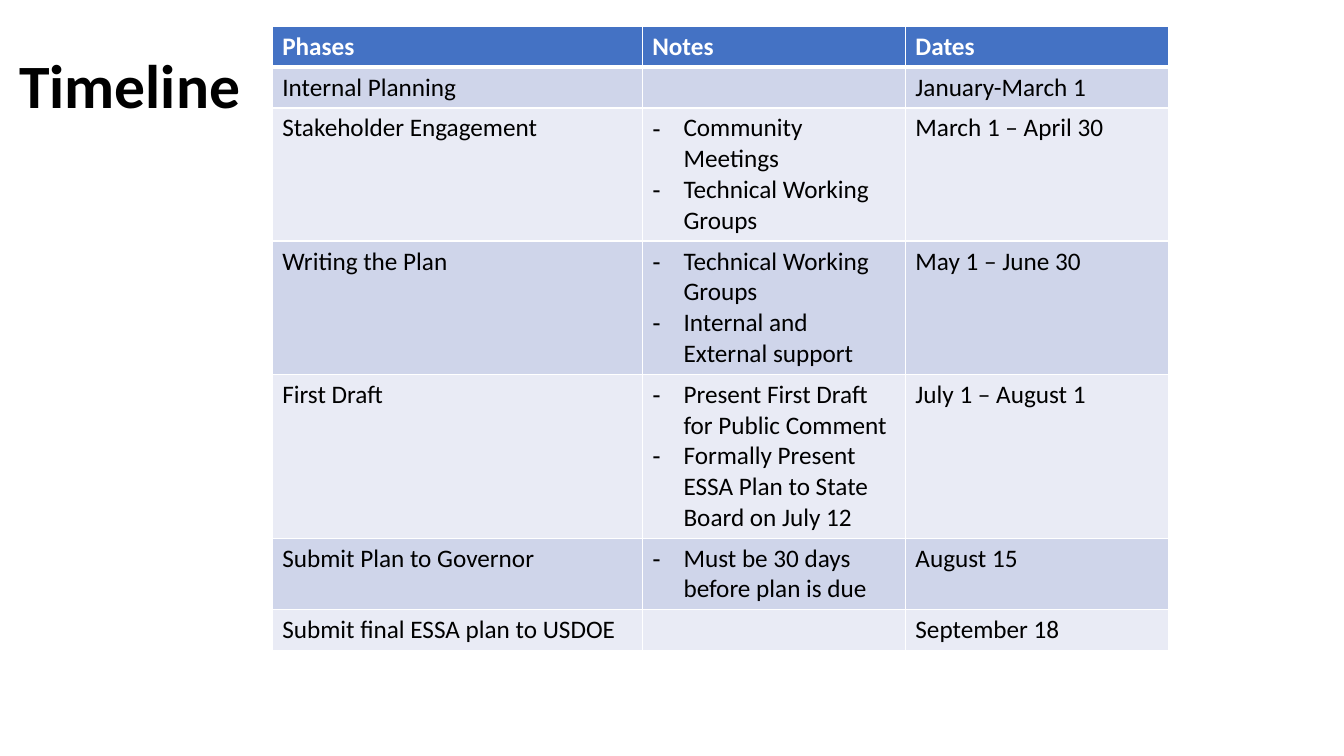
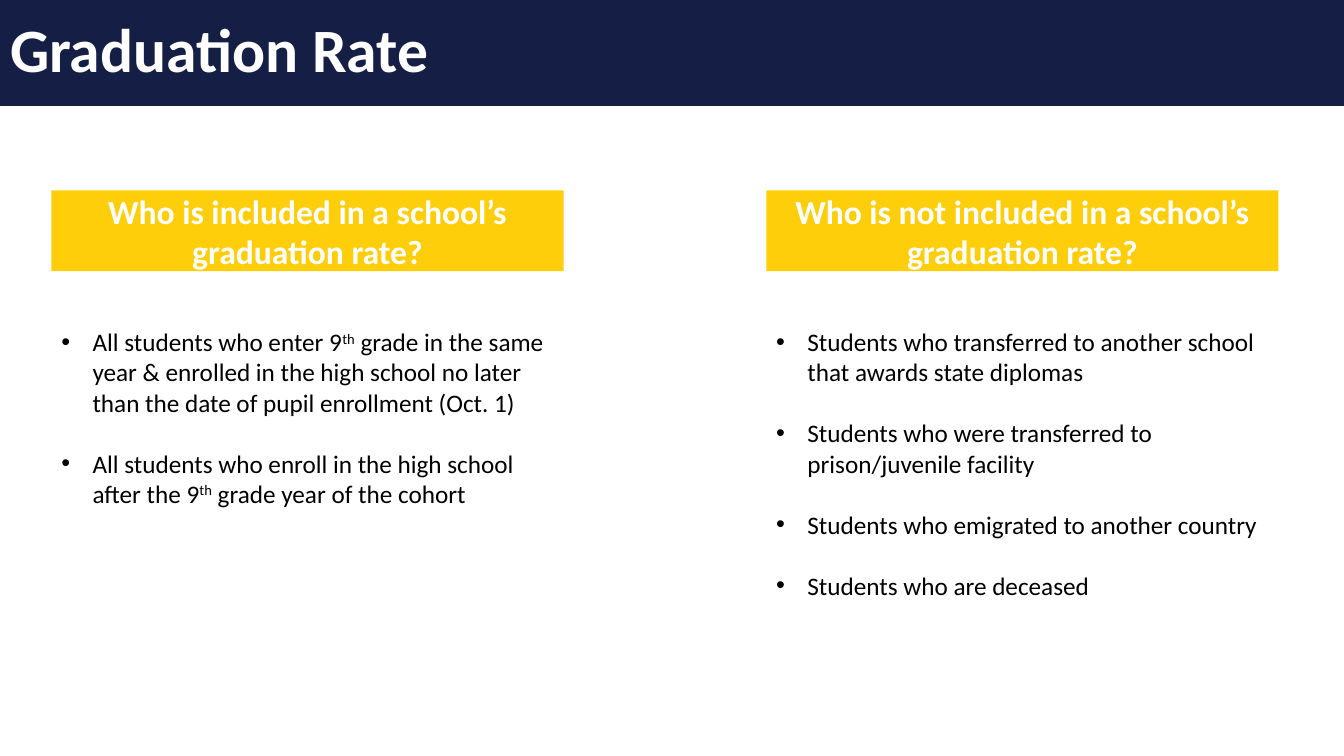
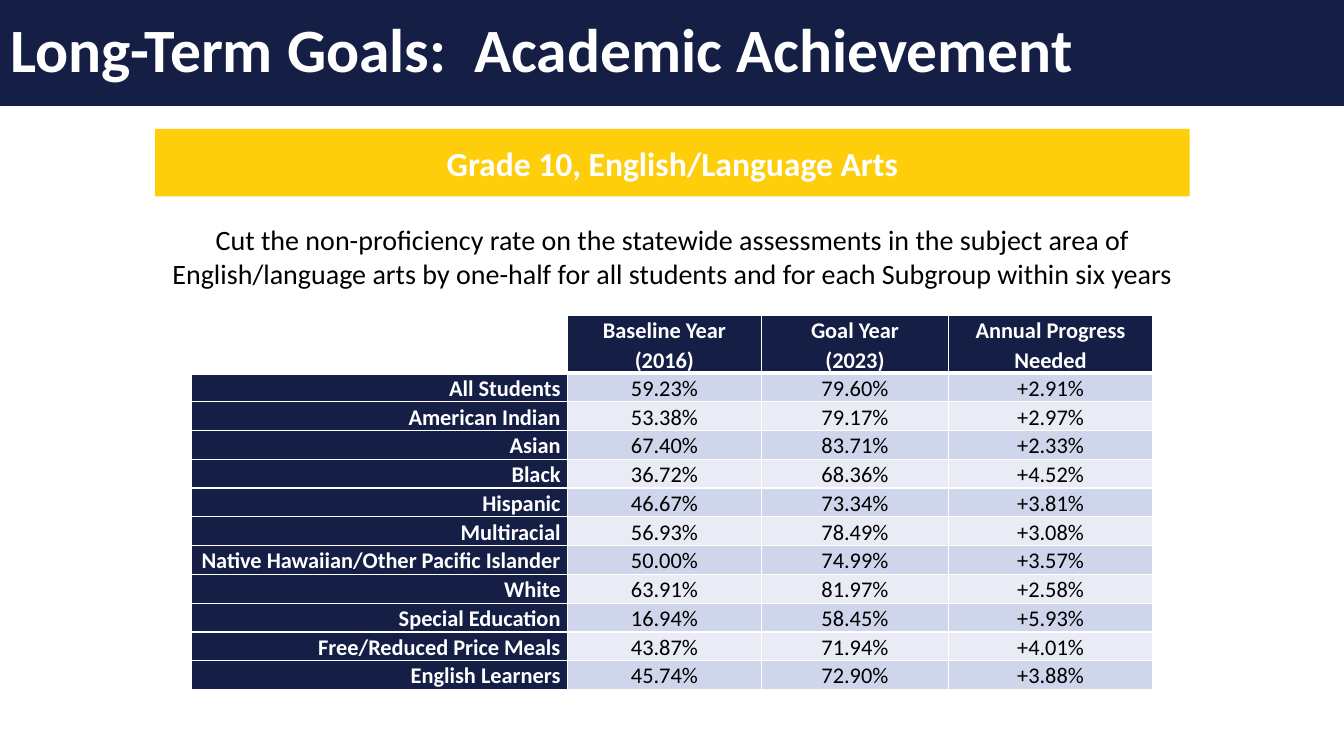
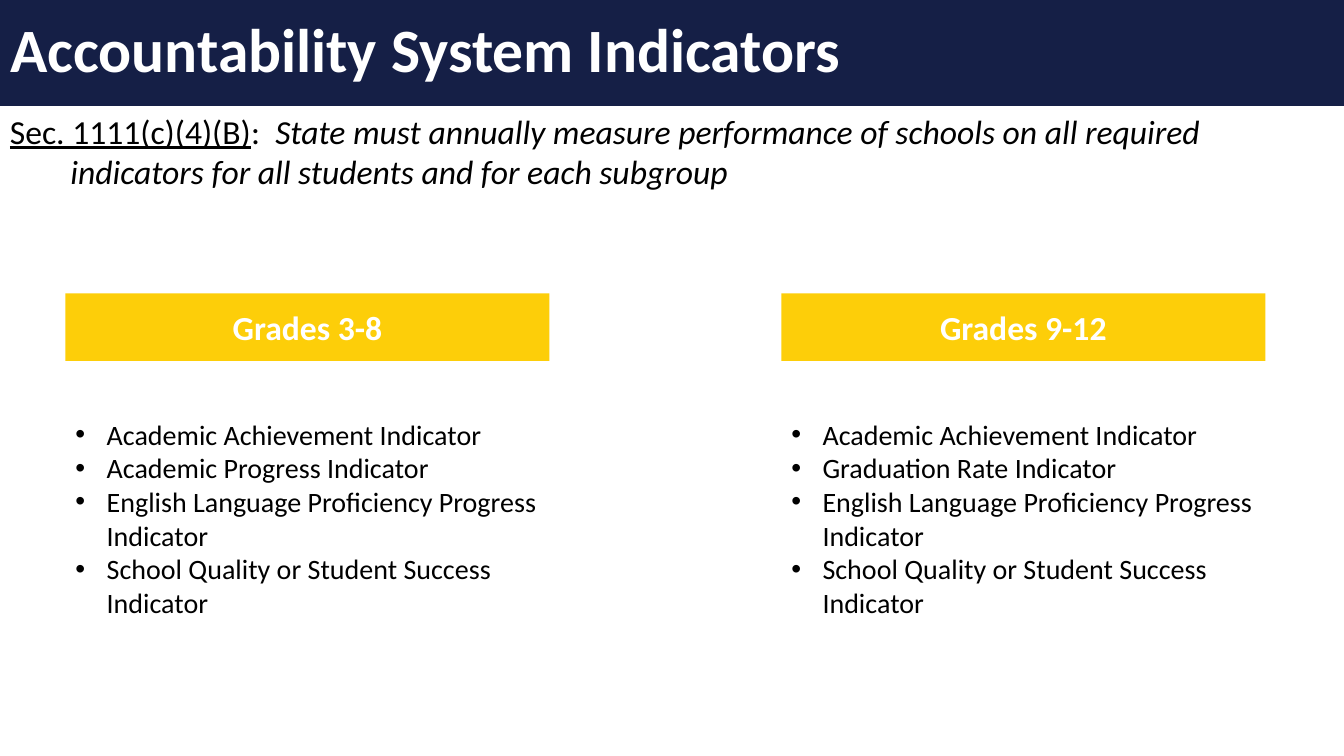
"""Build four slides on a state education plan: timeline, graduation rate, goals and indicators."""
import pptx
import pptx.util
import pptx.dml.color
import pptx.enum.text
import pptx.enum.shapes
import pptx.oxml.ns
import lxml.etree

Inches = pptx.util.Inches
Pt = pptx.util.Pt
ALIGN = pptx.enum.text.PP_ALIGN
MIDDLE = pptx.enum.text.MSO_ANCHOR.MIDDLE
qn = pptx.oxml.ns.qn

FONT = "Calibri"
COLORS = {"navy": "151F46", "gold": "FDCE09", "blue": "4472C4", "odd": "CFD5EA",
          "even": "E9EBF5", "white": "FFFFFF", "black": "000000"}

PHASES = [
    ("Phases", "Notes", "Dates"),
    ("Internal Planning", [], "January-March 1"),
    ("Stakeholder Engagement", ["Community Meetings", "Technical Working Groups"],
     "March 1 – April 30"),
    ("Writing the Plan", ["Technical Working Groups", "Internal and External support"],
     "May 1 – June 30"),
    ("First Draft", ["Present First Draft for Public Comment",
                     "Formally Present ESSA Plan to State Board on July 12"],
     "July 1 – August 1"),
    ("Submit Plan to Governor", ["Must be 30 days before plan is due"], "August 15"),
    ("Submit final ESSA plan to USDOE", [], "September 18"),
]
PHASE_COLS = [3.67, 2.61, 2.61]
PHASE_ROWS = [0.4, 0.4, 1.32, 1.32, 1.62, 0.71, 0.4]

RATES = [
    ("Who is included in a school’s graduation rate?", [
        [("All students who enter 9", ""), ("th", "sup"),
         (" grade in the same year & enrolled in the high school no later than "
          "the date of pupil enrollment (Oct. 1)", "")],
        [("All students who enroll in the high school after the 9", ""), ("th", "sup"),
         (" grade year of the cohort", "")],
    ]),
    ("Who is not included in a school’s graduation rate?", [
        "Students who transferred to another school that awards state diplomas",
        "Students who were transferred to prison/juvenile facility",
        "Students who emigrated to another country",
        "Students who are deceased",
    ]),
]

AIM = ("Cut the non-proficiency rate on the statewide assessments in the subject area of "
       "English/language arts by one-half for all students and for each Subgroup within six years")
GOALS = [
    ("", ["Baseline Year (2016)"], ["Goal Year", "(2023)"], ["Annual Progress Needed"]),
    ("All Students", "59.23%", "79.60%", "+2.91%"),
    ("American Indian", "53.38%", "79.17%", "+2.97%"),
    ("Asian", "67.40%", "83.71%", "+2.33%"),
    ("Black", "36.72%", "68.36%", "+4.52%"),
    ("Hispanic", "46.67%", "73.34%", "+3.81%"),
    ("Multiracial", "56.93%", "78.49%", "+3.08%"),
    ("Native Hawaiian/Other Pacific Islander", "50.00%", "74.99%", "+3.57%"),
    ("White", "63.91%", "81.97%", "+2.58%"),
    ("Special Education", "16.94%", "58.45%", "+5.93%"),
    ("Free/Reduced Price Meals", "43.87%", "71.94%", "+4.01%"),
    ("English Learners", "45.74%", "72.90%", "+3.88%"),
]
GOAL_COLS = [3.73, 1.92, 1.86, 2.02]
GOAL_ROWS = [0.57] + [0.28] * (len(GOALS) - 1)

RULE = [("Sec. 1111(c)(4)(B)", "u"), (":  ", ""),
        ("State must annually measure performance of schools on all required "
         "indicators for all students and for each subgroup", "i")]
LEVELS = [
    ("Grades 3-8", ["Academic Achievement Indicator", "Academic Progress Indicator",
                    "English Language Proficiency Progress Indicator",
                    "School Quality or Student Success Indicator"]),
    ("Grades 9-12", ["Academic Achievement Indicator", "Graduation Rate Indicator",
                     "English Language Proficiency Progress Indicator",
                     "School Quality or Student Success Indicator"]),
]


def tint(name):
    return pptx.dml.color.RGBColor.from_string(COLORS[name])


def paint(item, name):
    item.fill.solid()
    item.fill.fore_color.rgb = tint(name)


def hang(para, depth, mark=None):
    props = para._p.get_or_add_pPr()
    props.set("marL", str(Inches(depth)))
    props.set("indent", str(-Inches(depth)))
    if mark:
        lxml.etree.SubElement(props, qn("a:buFont")).set("typeface", "Arial")
        lxml.etree.SubElement(props, qn("a:buChar")).set("char", mark)


def write(frame, paras, size, color="black", bold=False, align=ALIGN.LEFT,
          mark=None, gap=0, lead=None):
    """Fill a text frame; a paragraph is a string or a list of (text, style) runs."""
    for index, parts in enumerate(paras):
        para = frame.add_paragraph() if index else frame.paragraphs[0]
        para.alignment = align
        if lead:
            para.line_spacing = lead
        if index and gap:
            para.space_before = Pt(gap)
        if mark:
            hang(para, 0.31, mark)
        for text, style in [(parts, "")] if isinstance(parts, str) else parts:
            run = para.add_run()
            run.text = text
            font = run.font
            font.name, font.size, font.bold = FONT, Pt(size), bold
            font.color.rgb = tint(color)
            if style == "u":
                font.underline = True
            elif style == "i":
                font.italic = True
            elif style == "sup":
                run._r.get_or_add_rPr().set("baseline", "30000")


def place(shape, box):
    shape.left, shape.top, shape.width, shape.height = map(Inches, box)


def start(deck, title, box=(0, 0, 13.33, 1.05), band=True):
    slide = deck.slides.add_slide(deck.slide_layouts[5])
    head = slide.shapes.title
    place(head, box)
    if band:
        paint(head, "navy")
    frame = head.text_frame
    frame.auto_size = pptx.enum.text.MSO_AUTO_SIZE.NONE
    frame.vertical_anchor = MIDDLE
    write(frame, [title], 44, "white" if band else "black", True, lead=0.9)
    return slide


def label(slide, text, box):
    shape = slide.shapes.add_shape(pptx.enum.shapes.MSO_SHAPE.RECTANGLE, *map(Inches, box))
    shape.shadow.inherit = False
    paint(shape, "gold")
    shape.line.fill.background()
    shape.text_frame.vertical_anchor = MIDDLE
    write(shape.text_frame, [text], 24, "white", True, ALIGN.CENTER)


def note(slide, paras, box, size, **style):
    frame = slide.shapes.add_textbox(*map(Inches, box)).text_frame
    frame.word_wrap = True
    write(frame, paras, size, **style)
    return frame


def pair(slide, items, lefts, width, band, top, size, gap=0):
    """Place two labelled bullet lists side by side."""
    for (text, points), left in zip(items, lefts):
        label(slide, text, (left, band[0], width, band[1]))
        note(slide, points, (left, top, width, 2.1), size, mark="•", gap=gap)


def edge(cell, head):
    props = cell._tc.get_or_add_tcPr()
    for side in "LRTB":
        wide = 3 if head and side == "B" else 1
        line = lxml.etree.SubElement(props, qn("a:ln" + side), w=str(Pt(wide)))
        fill = lxml.etree.SubElement(line, qn("a:solidFill"))
        lxml.etree.SubElement(fill, qn("a:srgbClr")).set("val", COLORS["white"])


def grid(slide, spot, data, cols, rows, style):
    """Add a table; style(row, column) gives fill name and text options."""
    box = (*spot, sum(cols), sum(rows))
    table = slide.shapes.add_table(len(rows), len(cols), *map(Inches, box)).table
    table.horz_banding = False
    for column, width in zip(table.columns, cols):
        column.width = Inches(width)
    for r, (values, height) in enumerate(zip(data, rows)):
        table.rows[r].height = Inches(height)
        for c, value in enumerate(values):
            cell = table.cell(r, c)
            edge(cell, r == 0)
            name, look = style(r, c)
            if name:
                paint(cell, name)
            else:
                cell.fill.background()
            if value:
                write(cell.text_frame, [value] if isinstance(value, str) else value, **look)
    return table


def stripe(row):
    return "odd" if row % 2 else "even"


def phase(row, col):
    if row == 0:
        return "blue", dict(size=18, color="white", bold=True)
    return stripe(row), dict(size=18, mark="-" if col == 1 else None)


def goal(row, col):
    look = dict(size=16, lead=1.07, align=ALIGN.CENTER if col else ALIGN.RIGHT)
    if row and col:
        return stripe(row), look
    look.update(color="white", bold=True)
    return "navy" if row or col else None, look


def main():
    deck = pptx.Presentation()
    deck.slide_width, deck.slide_height = Inches(13.33), Inches(7.5)

    slide = start(deck, "Timeline", (0.09, 0.15, 11.5, 1.45), False)
    grid(slide, (2.7, 0.26), PHASES, PHASE_COLS, PHASE_ROWS, phase)

    slide = start(deck, "Graduation Rate")
    pair(slide, RATES, (0.51, 7.6), 5.08, (1.89, 0.8), 3.19, 18, 22)

    slide = start(deck, "Long-Term Goals:  Academic Achievement")
    label(slide, "Grade 10, English/Language Arts", (1.54, 1.28, 10.26, 0.67))
    note(slide, [AIM], (1.54, 2.16, 10.26, 0.77), 20, align=ALIGN.CENTER)
    table = grid(slide, (1.9, 3.13), GOALS, GOAL_COLS, GOAL_ROWS, goal)
    for cell in table.iter_cells():
        cell.margin_left = cell.margin_right = Inches(0.07)
        cell.margin_top = cell.margin_bottom = 0

    slide = start(deck, "Accountability System Indicators")
    frame = note(slide, [RULE], (0, 1.05, 13.33, 1.04), 24)
    frame.margin_right = Inches(0.5)
    hang(frame.paragraphs[0], 0.6)
    pair(slide, LEVELS, (0.65, 7.75), 4.8, (2.91, 0.67), 4.09, 20)

    deck.save("out.pptx")


if __name__ == "__main__":
    main()
